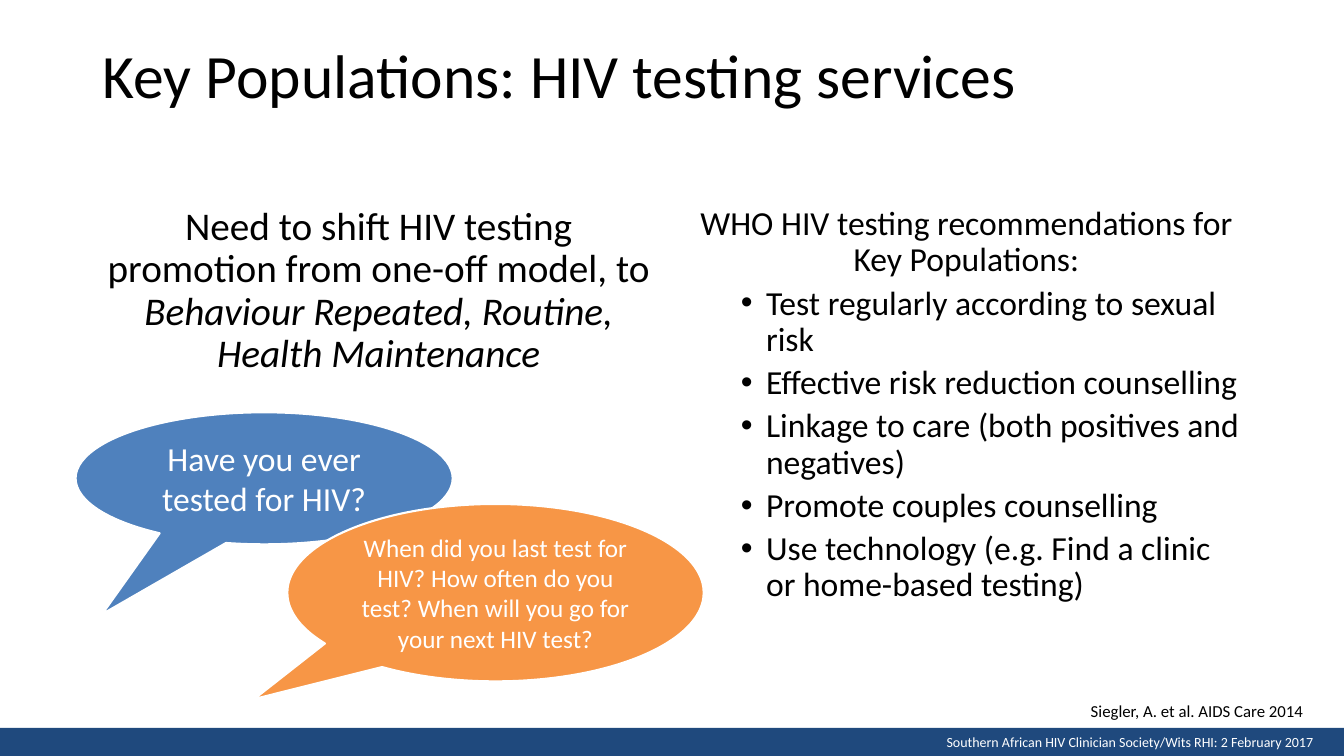
"""Build the slide on HIV testing services for key populations."""
from lxml import etree
from pptx import Presentation
from pptx.dml.color import RGBColor
from pptx.enum import shapes, text
from pptx.oxml.ns import qn
from pptx.util import Inches, Pt

FONT = "Calibri"
BLACK = RGBColor(0x00, 0x00, 0x00)
WHITE = RGBColor(0xFF, 0xFF, 0xFF)
NAVY = RGBColor(0x1F, 0x49, 0x7D)
BLUE = RGBColor(0x4F, 0x81, 0xBD)
ORANGE = RGBColor(0xF7, 0x96, 0x46)
CENTER = text.PP_ALIGN.CENTER

RECOMMENDATIONS = [
    "Test regularly according to sexual risk",
    "Effective risk reduction counselling",
    "Linkage to care (both positives and negatives)",
    "Promote couples counselling",
    "Use technology (e.g. Find a clinic or home-based testing)",
]


def add_run(p, words, size, color=BLACK, italic=None):
    """Add one run of text to a paragraph."""
    r = p.add_run()
    r.text = words
    r.font.name = FONT
    r.font.size = Pt(size)
    r.font.color.rgb = color
    r.font.italic = italic


def add_text(s, box, wrap=True):
    """Add a text box and return its text frame."""
    tf = s.shapes.add_textbox(*map(Inches, box)).text_frame
    tf.word_wrap = wrap
    return tf


def add_shape(s, kind, box, fill):
    """Add a flat filled shape without a line."""
    sp = s.shapes.add_shape(kind, *map(Inches, box))
    sp.shadow.inherit = False
    sp.fill.solid()
    sp.fill.fore_color.rgb = fill
    sp.line.fill.background()
    return sp


def add_bullet(p):
    """Give a paragraph a hanging bullet."""
    pPr = p._p.get_or_add_pPr()
    pPr.set("marL", str(Inches(0.75)))
    pPr.set("indent", str(Inches(-0.25)))
    etree.SubElement(pPr, qn("a:buFont")).set("typeface", "Arial")
    etree.SubElement(pPr, qn("a:buChar")).set("char", "•")


def add_footer(s, box):
    """Draw the footer band with the event line at its right."""
    left, top, width, height = box
    add_shape(s, shapes.MSO_SHAPE.RECTANGLE, box, NAVY)
    tf = add_text(s, (left + width - 4.04, top + 0.01, 3.86, height), wrap=False)
    add_run(tf.paragraphs[0],
            "Southern African HIV Clinician Society/Wits RHI: 2 February 2017", 10, WHITE)


def add_title(s, box):
    """Write the slide title."""
    p = add_text(s, box).paragraphs[0]
    p.line_spacing = 0.9
    add_run(p, "Key Populations: HIV testing services", 44)


def add_message(s, box):
    """Write the main message in the left column."""
    p = add_text(s, box).paragraphs[0]
    p.alignment = CENTER
    p.line_spacing = 0.9
    add_run(p, "Need to shift HIV testing promotion from one-off model, to ", 28)
    add_run(p, "Behaviour Repeated, Routine, Health Maintenance", 28, italic=True)


def add_recommendations(s, box):
    """Write the heading and bullets of the right column."""
    tf = add_text(s, box)
    p = tf.paragraphs[0]
    p.alignment = CENTER
    p.line_spacing = 0.9
    add_run(p, "WHO HIV testing recommendations for Key Populations:", 24)
    for item in RECOMMENDATIONS:
        p = tf.add_paragraph()
        p.level = 1
        p.line_spacing = 0.9
        p.space_before = Pt(5)
        add_bullet(p)
        add_run(p, item, 24)


def add_callout(s, box, fill, tip, words, size):
    """Draw an oval speech bubble with centred text."""
    sp = add_shape(s, shapes.MSO_SHAPE.OVAL_CALLOUT, box, fill)
    sp.adjustments[0], sp.adjustments[1] = tip
    sp.line.color.rgb = WHITE
    sp.line.width = Pt(1.5)
    tf = sp.text_frame
    tf.word_wrap = True
    tf.vertical_anchor = text.MSO_ANCHOR.MIDDLE
    p = tf.paragraphs[0]
    p.alignment = CENTER
    add_run(p, words, size, WHITE)


def add_citation(s, box):
    """Write the citation above the footer."""
    tf = add_text(s, box, wrap=False)
    add_run(tf.paragraphs[0], "Siegler, A. et al. AIDS Care 2014", 12)


def main():
    """Build and save the presentation."""
    prs = Presentation()
    prs.slide_width, prs.slide_height = Inches(13.33), Inches(7.5)
    s = prs.slides.add_slide(prs.slide_layouts[6])
    add_footer(s, (0, 7.22, 13.33, 0.28))
    add_title(s, (0.92, 0.4, 11.5, 1.45))
    add_message(s, (0.92, 2, 5.67, 1.95))
    add_recommendations(s, (6.75, 2, 5.67, 4.76))
    add_callout(s, (0.75, 4.09, 3.74, 1.31), BLUE, (-0.43, 1.03),
                "Have you ever tested for HIV?", 24)
    add_callout(s, (2.85, 5, 4.13, 1.76), ORANGE, (-0.58, 0.6),
                "When did you last test for HIV? How often do you test? "
                "When will you go for your next HIV test?", 18)
    add_citation(s, (10.72, 6.9, 2.34, 0.3))
    prs.save("out.pptx")


if __name__ == "__main__":
    main()
